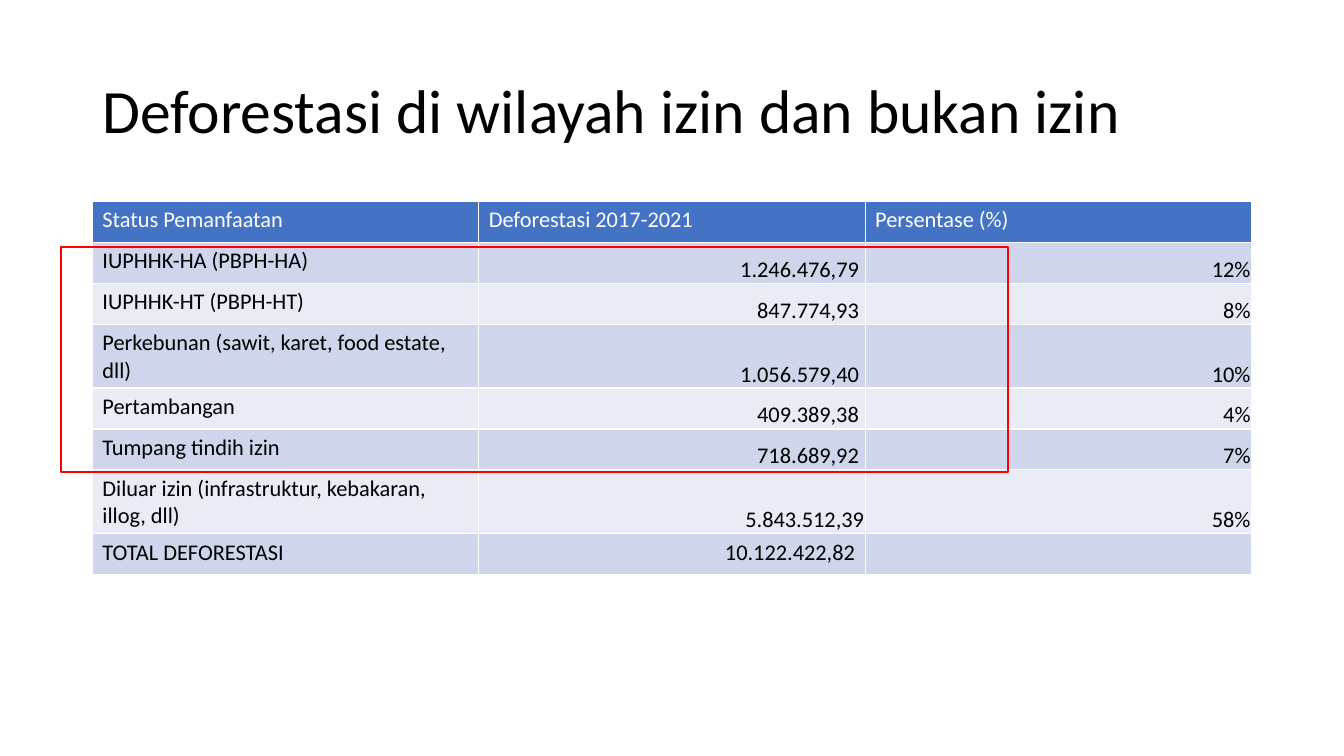
from pptx import Presentation
from pptx.dml.color import RGBColor
from pptx.enum.shapes import MSO_SHAPE
from pptx.enum.text import MSO_ANCHOR, PP_ALIGN
from pptx.util import Pt

FONT = "Calibri"
COLORS = {
    "text": "000000",
    "header": "4472C4",
    "header_text": "FFFFFF",
    "odd_row": "CFD5EA",
    "even_row": "E9EBF5",
    "highlight": "FF0000",
}
HEADERS = ["Status Pemanfaatan", "Deforestasi 2017-2021", "Persentase (%)"]
PERMITS = [
    ["IUPHHK-HA (PBPH-HA)", "1.246.476,79", "12%"],
    ["IUPHHK-HT (PBPH-HT)", "847.774,93", "8%"],
    ["Perkebunan (sawit, karet, food estate, dll)", "1.056.579,40", "10%"],
    ["Pertambangan", "409.389,38", "4%"],
    ["Tumpang tindih izin", "718.689,92", "7%"],
]
OUTSIDE = ["Diluar izin (infrastruktur, kebakaran, illog, dll)", "5.843.512,39", "58%"]
TOTAL = ["TOTAL DEFORESTASI", "10.122.422,82", ""]
ROWS = [HEADERS, *PERMITS, OUTSIDE, TOTAL]
LEFT, WIDTH = 66, 828
ROW_HEIGHT = 29.2
EDGE_MARGIN = 0.75
NUMBER_MARGIN = 4.4


def color(name):
    return RGBColor.from_string(COLORS[name])


def format_text(para, size, color_name):
    for span in para.runs:
        span.font.name = FONT
        span.font.size = Pt(size)
        span.font.bold = False
        span.font.color.rgb = color(color_name)


def add_title(page, text):
    box = page.shapes.add_textbox(Pt(LEFT), Pt(28.75), Pt(WIDTH), Pt(104.4))
    frame = box.text_frame
    frame.word_wrap = True
    frame.vertical_anchor = MSO_ANCHOR.MIDDLE
    frame.text = text
    para = frame.paragraphs[0]
    para.line_spacing = 0.9
    format_text(para, 44, "text")


def align_number(cell, right_margin):
    cell.vertical_anchor = MSO_ANCHOR.BOTTOM
    cell.margin_left = cell.margin_top = Pt(EDGE_MARGIN)
    cell.margin_right = Pt(right_margin)
    cell.margin_bottom = Pt(0)


def fill_cell(cell, text, row, column):
    is_header = row == 0
    band = "header" if is_header else "odd_row" if row % 2 else "even_row"
    cell.fill.solid()
    cell.fill.fore_color.rgb = color(band)
    cell.text = text
    para = cell.text_frame.paragraphs[0]
    format_text(para, 16, "header_text" if is_header else "text")
    if is_header or column == 0:
        return
    para.alignment = PP_ALIGN.RIGHT
    if ROWS[row] is not TOTAL:
        is_permit_area = column == 1 and ROWS[row] is not OUTSIDE
        align_number(cell, NUMBER_MARGIN if is_permit_area else EDGE_MARGIN)


def add_deforestation_table(page):
    frame = page.shapes.add_table(
        len(ROWS), len(HEADERS), Pt(LEFT), Pt(144), Pt(WIDTH), Pt(ROW_HEIGHT * len(ROWS))
    )
    table = frame.table
    for row, texts in enumerate(ROWS):
        table.rows[row].height = Pt(ROW_HEIGHT)
        for column, text in enumerate(texts):
            fill_cell(table.cell(row, column), text, row, column)


def add_permit_highlight(page):
    outline = page.shapes.add_shape(
        MSO_SHAPE.RECTANGLE, Pt(43.5), Pt(176.4), Pt(676.5), Pt(160.6)
    )
    outline.shadow.inherit = False
    outline.fill.background()
    outline.line.color.rgb = color("highlight")
    outline.line.width = Pt(1.5)


def main():
    deck = Presentation()
    deck.slide_width, deck.slide_height = Pt(960), Pt(540)
    page = deck.slides.add_slide(deck.slide_layouts[6])
    add_title(page, "Deforestasi di wilayah izin dan bukan izin")
    add_deforestation_table(page)
    add_permit_highlight(page)
    deck.save("out.pptx")


if __name__ == "__main__":
    main()
